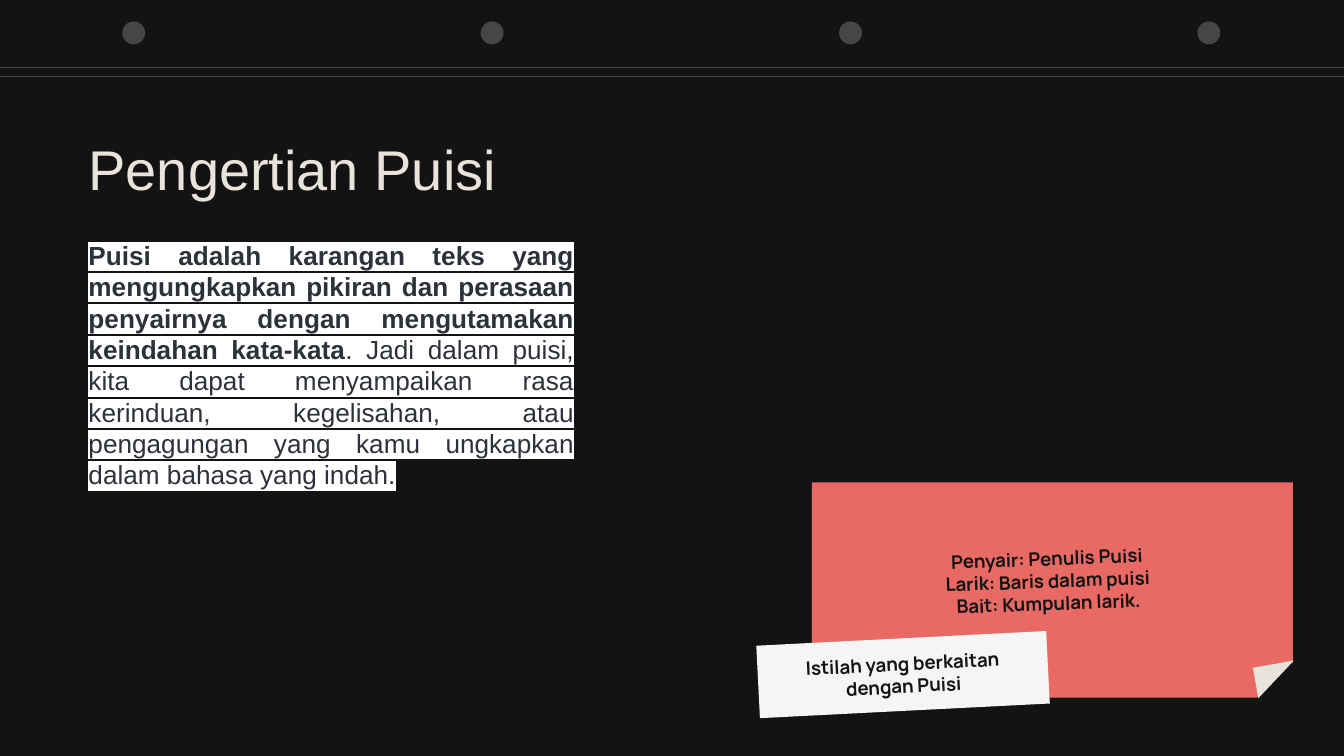
from dataclasses import dataclass
from typing import Optional

from lxml.etree import SubElement
from pptx import Presentation
from pptx.dml.color import RGBColor
from pptx.enum.shapes import MSO_CONNECTOR, MSO_SHAPE
from pptx.enum.text import MSO_ANCHOR, PP_ALIGN
from pptx.oxml.ns import qn
from pptx.util import Inches, Pt

INK = "131313"
GREY = "444746"
CREAM = "E9E4DB"


@dataclass
class Frame:
    left: float
    top: float
    width: float
    height: float
    rotation: float = 0

    def lengths(self):
        return [Inches(n) for n in (self.left, self.top, self.width, self.height)]


@dataclass
class Span:
    text: str
    bold: bool = False


def set_color(target, value: str):
    if hasattr(target, "solid"):
        target.solid()
        target = target.fore_color
    target.rgb = RGBColor.from_string(value)


def add_figure(page, kind, frame: Frame, color: str, flip: bool = False):
    shape = page.shapes.add_shape(kind, *frame.lengths())
    shape.rotation = frame.rotation
    shape.shadow.inherit = False
    set_color(shape.fill, color)
    shape.line.fill.background()
    if flip:
        shape._element.spPr.find(qn("a:xfrm")).set("flipH", "1")
    return shape


def add_rule(page, top: float):
    rule = page.shapes.add_connector(
        MSO_CONNECTOR.STRAIGHT, Inches(0), Inches(top), Inches(10), Inches(top)
    )
    set_color(rule.line.fill, GREY)
    rule.line.width = Pt(0.75)
    SubElement(rule._element.spPr, qn("a:effectLst"))


def add_box(page, frame: Frame):
    box = page.shapes.add_textbox(*frame.lengths())
    box.rotation = frame.rotation
    return box


def write(box, paragraphs: list[list[Span]], *, size: float, color: str,
          font: str = "Arial", align=PP_ALIGN.LEFT, anchor=MSO_ANCHOR.TOP,
          spacing: Optional[float] = None, before: float = 0,
          highlight: Optional[str] = None):
    frame = box.text_frame
    frame.word_wrap = True
    frame.vertical_anchor = anchor
    frame.margin_left = frame.margin_right = Inches(0.1)
    frame.margin_top = frame.margin_bottom = Inches(0.1)
    for index, spans in enumerate(paragraphs):
        para = frame.add_paragraph() if index else frame.paragraphs[0]
        para.alignment = align
        para.line_spacing = spacing
        para.space_before = Pt(before)
        for span in spans:
            for number, line in enumerate(span.text.split("\n")):
                if number:
                    para.add_line_break()
                run = para.add_run()
                run.text = line
                run.font.name = font
                run.font.size = Pt(size)
                run.font.bold = span.bold
                set_color(run.font.fill, color)
                if highlight:
                    properties = run.font._element
                    mark = SubElement(properties, qn("a:highlight"))
                    SubElement(mark, qn("a:srgbClr")).set("val", highlight)
                    properties.find(qn("a:solidFill")).addnext(mark)


def main():
    deck = Presentation()
    deck.slide_width = Inches(10)
    deck.slide_height = Inches(10 * 9 / 16)
    page = deck.slides.add_slide(deck.slide_layouts[6])
    set_color(page.background.fill, INK)

    for column in range(4):
        hole = Frame(0.91 + column * 8 / 3, 0.16, 0.17, 0.17)
        add_figure(page, MSO_SHAPE.OVAL, hole, GREY)
    for top in (0.5, 0.57):
        add_rule(page, top)

    note = add_figure(page, MSO_SHAPE.SNIP_1_RECTANGLE,
                      Frame(6.04, 3.59, 3.58, 1.6, 180), "E96A64", flip=True)
    note.adjustments[0] = 0.167
    add_figure(page, MSO_SHAPE.RIGHT_TRIANGLE,
               Frame(9.38, 4.9, 0.23, 0.31, 79.9), CREAM)

    title = add_box(page, Frame(0.56, 0.96, 3.28, 0.61))
    write(title, [[Span("Pengertian Puisi")]], size=30, color=CREAM, spacing=0.9)

    definition = add_box(page, Frame(0.56, 1.68, 3.81, 1.29))
    write(definition, [[
        Span("Puisi adalah karangan teks yang mengungkapkan pikiran dan perasaan "
             "penyairnya dengan mengutamakan keindahan kata-kata", bold=True),
        Span(". Jadi dalam puisi, kita dapat menyampaikan rasa kerinduan, "
             "kegelisahan, atau pengagungan yang kamu ungkapkan dalam bahasa "
             "yang indah."),
    ]], size=14, color="2C313A", align=PP_ALIGN.JUSTIFY, before=10,
        highlight="FFFFFF")

    note_format = dict(size=10, color=INK, font="Manrope", align=PP_ALIGN.CENTER)
    label = add_figure(page, MSO_SHAPE.RECTANGLE,
                       Frame(5.64, 4.75, 2.16, 0.54, 357.1), "F5F5F5")
    write(label, [[Span("Istilah yang berkaitan dengan Puisi", bold=True)]],
          anchor=MSO_ANCHOR.MIDDLE, **note_format)

    terms = add_box(page, Frame(6.34, 3.97, 2.91, 0.69, 357.8))
    write(terms, [
        [Span("Penyair: Penulis Puisi", bold=True)],
        [Span("Larik: Baris dalam puisi\nBait: Kumpulan larik.", bold=True)],
    ], **note_format)

    deck.save("out.pptx")


if __name__ == "__main__":
    main()
